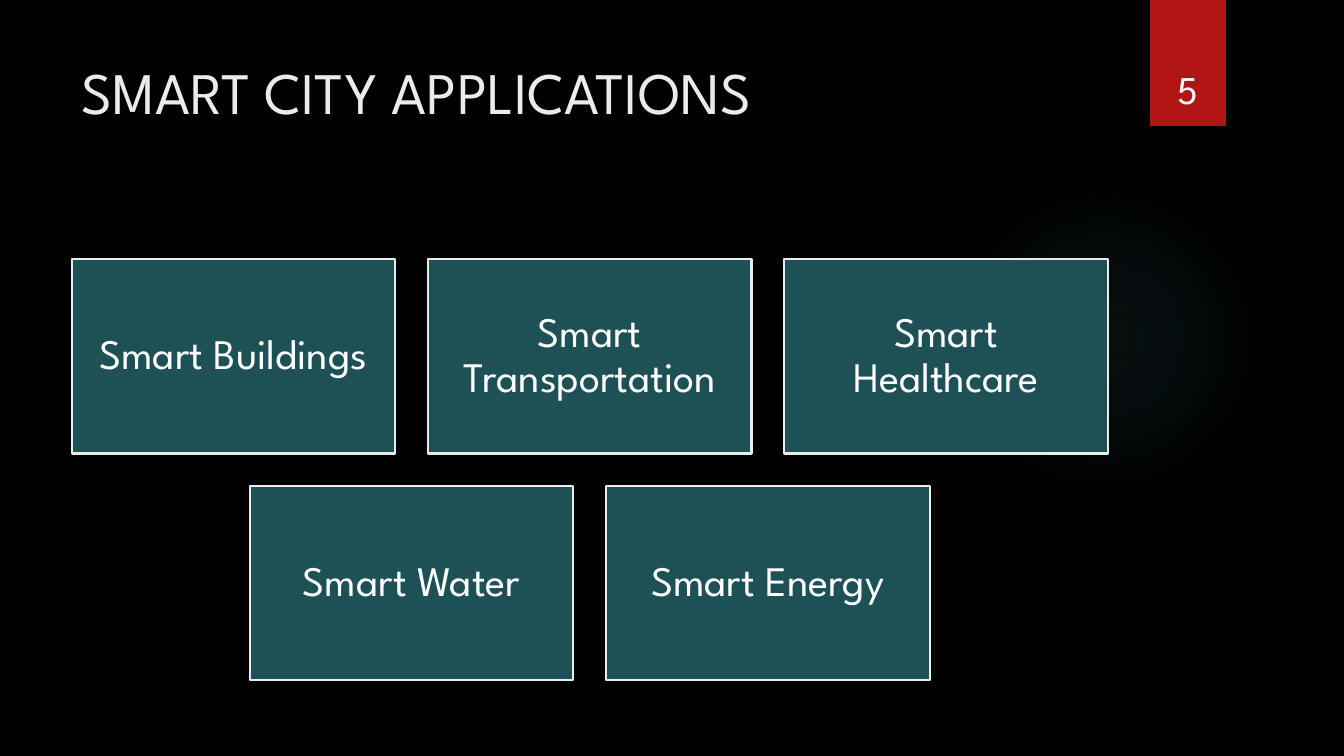
"""Build the smart city applications slide."""
from dataclasses import dataclass
from typing import Any

from pptx import Presentation
from pptx.dml.color import RGBColor as Rgb
from pptx.enum.shapes import MSO_SHAPE as Preset
from pptx.enum.text import MSO_ANCHOR as Anchor, PP_ALIGN as Align
from pptx.oxml import parse_xml
from pptx.oxml.ns import nsdecls, qn
from pptx.util import Inches, Pt


@dataclass(frozen=True)
class Theme:
    font: str = "League Spartan"
    background: str = "000000"
    glow: str = "50B9C1"
    ribbon: str = "B01513"
    tile: str = "1E5155"
    pale: str = "EBEBEB"
    white: str = "FFFFFF"
    title_size: int = 42
    number_size: int = 28
    tile_size: int = 30
    tile_line: float = 1.5


@dataclass(frozen=True)
class Frame:
    """Left, top, width and height in percent of the slide."""
    left: float
    top: float
    width: float
    height: float

    def lengths(self) -> list[int]:
        sides = (WIDTH, HEIGHT, WIDTH, HEIGHT)
        shares = (self.left, self.top, self.width, self.height)
        return [int(side * share / 100) for side, share in zip(sides, shares)]


@dataclass(frozen=True)
class Tile:
    text: str
    column: float
    row: int

    def frame(self) -> Frame:
        return Frame(GRID.left + self.column * COLUMN_STEP,
                     GRID.top + self.row * ROW_STEP, GRID.width, GRID.height)


THEME = Theme()
WIDTH, HEIGHT = Inches(13.333), Inches(7.5)
GRID = Frame(5.33, 34.27, 24.08, 25.73)
COLUMN_STEP, ROW_STEP = 26.51, 30
TILES = (
    Tile("Smart Buildings", 0, 0),
    Tile("Smart Transportation", 1, 0),
    Tile("Smart Healthcare", 2, 0),
    Tile("Smart Water", 0.5, 1),
    Tile("Smart Energy", 1.5, 1),
)
GLOW_STOPS = ((0, 7), (36, 6), (69, 0))


def apply(target: Any, values: dict[str, Any]) -> None:
    for name, value in values.items():
        setattr(target, name, value)


def write(box: Any, text: str, size: int, color: str, anchor: Anchor,
          align: Align, inset: float = 0.1, spacing: float = 1.0) -> None:
    edge = Inches(inset)
    apply(box.text_frame, {"word_wrap": True, "vertical_anchor": anchor,
                           "margin_left": edge, "margin_right": edge})
    para = box.text_frame.paragraphs[0]
    apply(para, {"alignment": align, "line_spacing": spacing})
    span = para.add_run()
    span.text = text
    apply(span.font, {"name": THEME.font, "size": Pt(size)})
    span.font.color.rgb = Rgb.from_string(color)


def add_panel(page: Any, preset: Preset, frame: Frame, color: str) -> Any:
    panel = page.shapes.add_shape(preset, *frame.lengths())
    panel.shadow.inherit = False
    panel.fill.solid()
    panel.fill.fore_color.rgb = Rgb.from_string(color)
    panel.line.fill.background()
    return panel


def add_glow(page: Any, frame: Frame) -> None:
    glow = add_panel(page, Preset.OVAL, frame, THEME.glow)
    stops = "".join(
        f'<a:gs pos="{place * 1000}"><a:srgbClr val="{THEME.glow}">'
        f'<a:alpha val="{alpha * 1000}"/></a:srgbClr></a:gs>'
        for place, alpha in GLOW_STOPS)
    gradient = parse_xml(
        f'<a:gradFill {nsdecls("a")}><a:gsLst>{stops}</a:gsLst>'
        '<a:path path="circle"><a:fillToRect l="50000" t="50000" '
        'r="50000" b="50000"/></a:path></a:gradFill>')
    properties = glow.element.spPr
    properties.replace(properties.find(qn("a:solidFill")), gradient)


def add_tile(page: Any, tile: Tile) -> None:
    panel = add_panel(page, Preset.RECTANGLE, tile.frame(), THEME.tile)
    panel.line.color.rgb = Rgb.from_string(THEME.pale)
    panel.line.width = Pt(THEME.tile_line)
    write(panel, tile.text, THEME.tile_size, THEME.white,
          Anchor.MIDDLE, Align.CENTER, 0.12, 0.9)


def main() -> None:
    deck = Presentation()
    apply(deck, {"slide_width": WIDTH, "slide_height": HEIGHT})
    page = deck.slides.add_slide(deck.slide_layouts[6])
    page.background.fill.solid()
    page.background.fill.fore_color.rgb = Rgb.from_string(THEME.background)

    add_glow(page, Frame(70.58, 24.4, 23.1, 41.07))
    add_panel(page, Preset.RECTANGLE, Frame(85.58, 0, 5.63, 16.67), THEME.ribbon)
    title = page.shapes.add_textbox(*Frame(5.33, 6.67, 77.18, 20.4).lengths())
    write(title, "SMART CITY APPLICATIONS", THEME.title_size, THEME.pale,
          Anchor.TOP, Align.LEFT)
    number = page.shapes.add_textbox(*Frame(84.9, 4.27, 6.9, 11.2).lengths())
    write(number, "5", THEME.number_size, THEME.white,
          Anchor.BOTTOM, Align.CENTER)
    for tile in TILES:
        add_tile(page, tile)
    deck.save("out.pptx")


if __name__ == "__main__":
    main()
